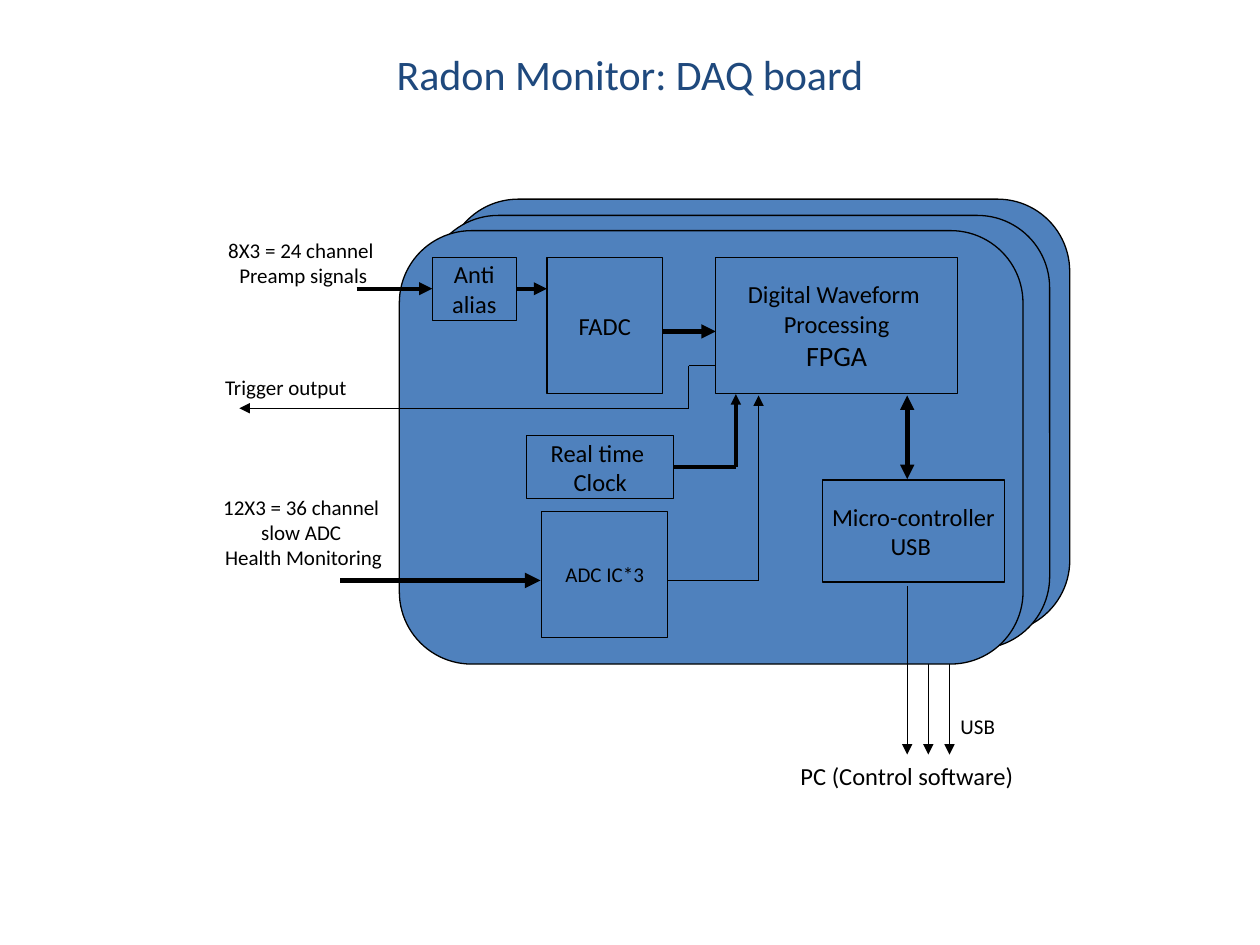
from lxml import etree
from pptx import Presentation
from pptx.dml.color import RGBColor
from pptx.enum.shapes import MSO_CONNECTOR, MSO_SHAPE
from pptx.enum.text import MSO_ANCHOR, MSO_AUTO_SIZE, PP_ALIGN
from pptx.oxml.ns import qn
from pptx.util import Pt

STRAIGHT = MSO_CONNECTOR.STRAIGHT
RECTANGLE, ROUNDED = MSO_SHAPE.RECTANGLE, MSO_SHAPE.ROUNDED_RECTANGLE
MIDDLE, CENTER = MSO_ANCHOR.MIDDLE, PP_ALIGN.CENTER
NO_AUTOFIT = MSO_AUTO_SIZE.NONE
LEFT_SIDE, RIGHT_SIDE = 1, 3

BLACK = RGBColor(0x00, 0x00, 0x00)
NAVY = RGBColor(0x1F, 0x49, 0x7D)
BLUE = RGBColor(0x4F, 0x81, 0xBD)
FONT = "Calibri"
THIN = 0.75

TITLE = "Radon Monitor: DAQ board"
TITLE_BOX = (144, 18, 432, 48)

BOARD_SIZE = (356.4, 247.7)
BOARD_CORNERS = [(254.9, 113.8), (243.4, 123.1), (228.2, 131.8)]

# name: (left, top, width, height), fill, [(text, size), ...]
BLOCKS = {
    "anti-alias": ((247, 147, 48, 36), None, [("Anti", 14), ("alias", 14)]),
    "fadc": ((312.5, 147, 66.2, 78), None, [("FADC", 14)]),
    "fpga": ((409, 147, 138.2, 78), None,
             [("Digital Waveform ", 14), ("Processing", 14), ("FPGA", 16)]),
    "controller": ((470.2, 274.3, 103.7, 58.3), None,
                   [("Micro-controller", 14), ("USB ", 14)]),
    "clock": ((301, 249, 84, 36), None, [("Real time ", 14), ("Clock", 14)]),
    "slow adc": ((309.6, 292.3, 72, 72), BLUE, [("ADC IC*3", 12)]),
}

# (left, top, width, height), [(text, size), ...]
LABELS = [
    ((136, 141.1, 72, 18), [("8X3 = 24 channel", 12), (" Preamp signals", 12)]),
    ((127.4, 212.4, 72, 18), [("Trigger output", 12)]),
    ((137.5, 295.2, 72, 18), [("12X3 = 36 channel ", 12), ("slow ADC ", 12),
                              (" Health Monitoring ", 12)]),
    ((522.7, 406, 72, 18), [("USB", 12)]),
    ((470.2, 431.2, 96, 24), [("PC (Control software)", 14)]),
]

USB_X, USB_END, USB_STEP = 518.4, 431.2, 12.1
HIDDEN_USB_STARTS = [(2, 358.6), (1, 347)]  # cable number, top behind the boards

# start, end, width, arrow ends, glued start, glued end
WIRES = [
    ((203.8, 165), (247, 165), 2.5, "tail", None, ("anti-alias", LEFT_SIDE)),
    ((295, 165), (312.5, 165), 2.5, "tail", ("anti-alias", RIGHT_SIDE), None),
    ((378.7, 189.4), (409, 189.4), 2.75, "tail", None, None),
    ((USB_X, 334.8), (USB_X, USB_END), THIN, "tail", None, None),
    ((USB_X, 273.8), (USB_X, 226), 2.75, "head tail", None, None),
    ((385, 267), (420.5, 267), 2, "", ("clock", RIGHT_SIDE), None),
    ((420.5, 267), (420.5, 225.2), 2, "tail", None, None),
    ((194.4, 331.7), (308.9, 331.7), 3, "tail", None, None),
    ((393.5, 233.3), (136.8, 233.3), THIN, "tail", None, None),
    ((393.5, 233.3), (393.5, 209), THIN, "", None, None),
    ((393.5, 209), (409, 209), THIN, "", None, None),
    ((382, 331.7), (433.5, 331.7), THIN, "", None, None),
    ((433.5, 331.7), (433.5, 226), THIN, "tail", None, None),
]


def write_text(frame, lines, color=BLACK, wrap=False):
    frame.word_wrap = wrap
    frame.auto_size = NO_AUTOFIT
    frame.vertical_anchor = MIDDLE
    for number, (text, size) in enumerate(lines):
        paragraph = frame.add_paragraph() if number else frame.paragraphs[0]
        paragraph.alignment = CENTER
        run = paragraph.add_run()
        run.text = text
        run.font.name = FONT
        run.font.size = Pt(size)
        run.font.color.rgb = color


def add_box(slide, kind, box, fill):
    shape = slide.shapes.add_shape(kind, *map(Pt, box))
    shape.shadow.inherit = False
    if fill is None:
        shape.fill.background()
    else:
        shape.fill.solid()
        shape.fill.fore_color.rgb = fill
    shape.line.color.rgb = BLACK
    shape.line.width = Pt(THIN)
    return shape


def add_wire(slide, start, end, width, arrows):
    wire = slide.shapes.add_connector(STRAIGHT, *map(Pt, start + end))
    wire.line.color.rgb = BLACK
    wire.line.width = Pt(width)
    line = wire.line._get_or_add_ln()
    for arrow in arrows.split():
        etree.SubElement(line, qn(f"a:{arrow}End"), type="triangle")
    etree.SubElement(wire._element.spPr, qn("a:effectLst"))
    return wire


def main():
    presentation = Presentation()
    presentation.slide_width, presentation.slide_height = Pt(720), Pt(540)
    slide = presentation.slides.add_slide(presentation.slide_layouts[5])

    title = slide.shapes.title
    title.left, title.top, title.width, title.height = map(Pt, TITLE_BOX)
    write_text(title.text_frame, [(TITLE, 24)], NAVY, wrap=True)

    for number, top in HIDDEN_USB_STARTS:
        x = USB_X + number * USB_STEP
        add_wire(slide, (x, top), (x, USB_END), THIN, "tail")
    for corner in BOARD_CORNERS:
        add_box(slide, ROUNDED, corner + BOARD_SIZE, BLUE)

    blocks = {}
    for name, (box, fill, lines) in BLOCKS.items():
        blocks[name] = add_box(slide, RECTANGLE, box, fill)
        write_text(blocks[name].text_frame, lines)

    for start, end, width, arrows, glued_start, glued_end in WIRES:
        wire = add_wire(slide, start, end, width, arrows)
        if glued_start:
            name, side = glued_start
            wire.begin_connect(blocks[name], side)
        if glued_end:
            name, side = glued_end
            wire.end_connect(blocks[name], side)

    for box, lines in LABELS:
        write_text(slide.shapes.add_textbox(*map(Pt, box)).text_frame, lines)

    presentation.save("out.pptx")


if __name__ == "__main__":
    main()
